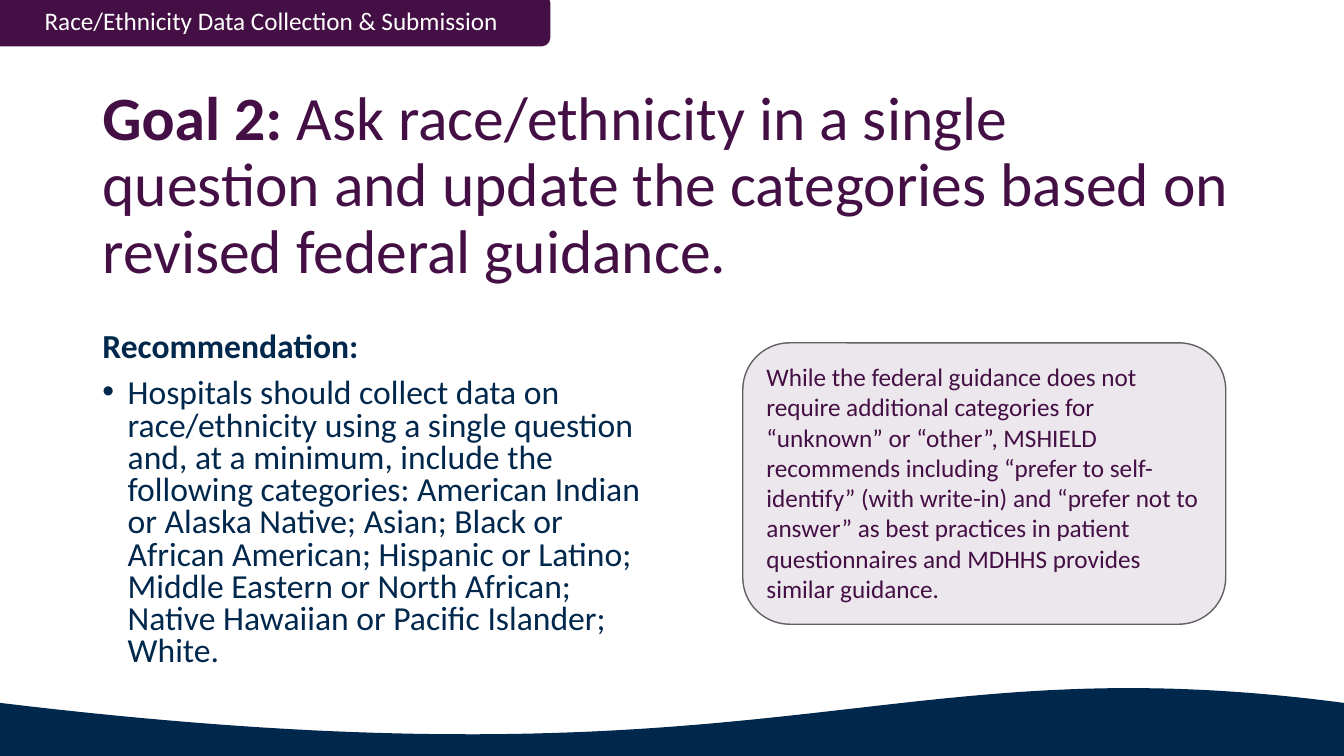
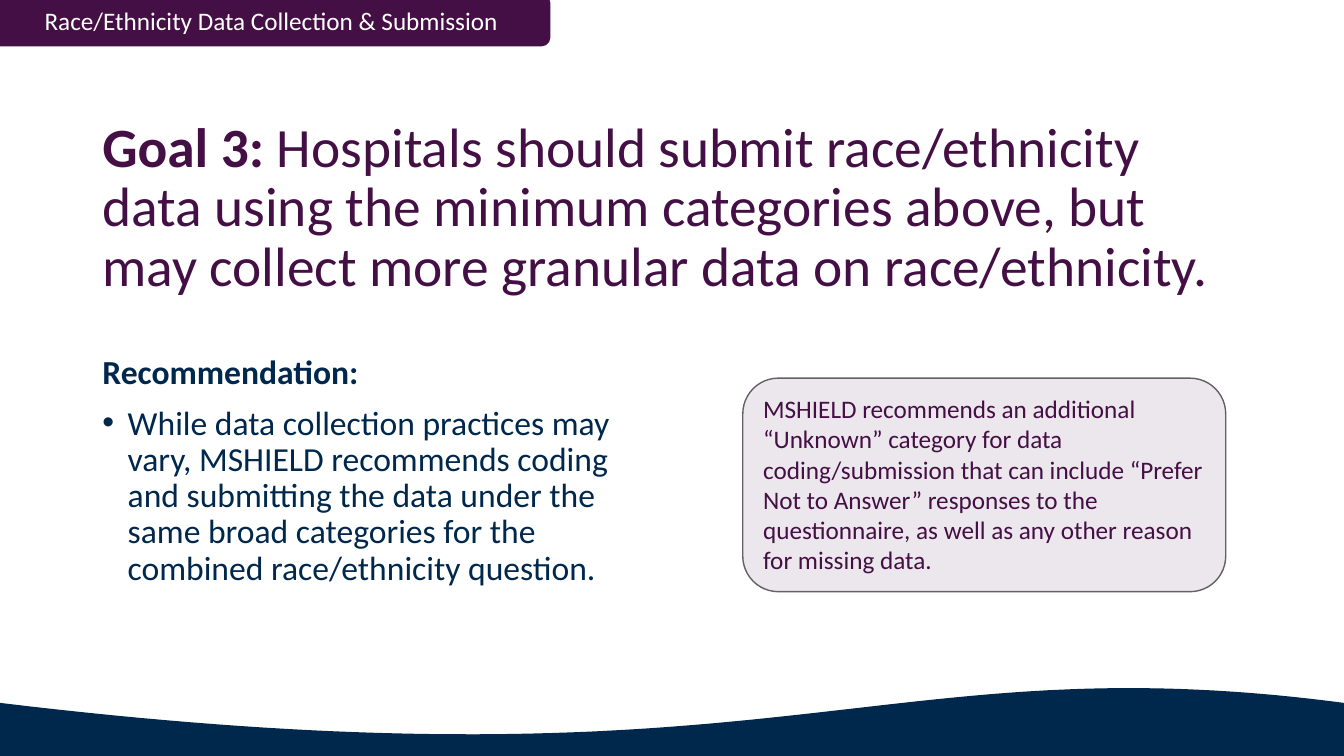
from lxml.etree import SubElement
from pptx import Presentation
from pptx.dml.color import RGBColor
from pptx.enum.shapes import MSO_SHAPE
from pptx.enum.text import MSO_ANCHOR, MSO_AUTO_SIZE, PP_ALIGN
from pptx.oxml.ns import qn
from pptx.util import Cm, Pt

# Shared style
FONT = "Calibri"
PURPLE, NAVY, WHITE = "440F44", "00274C", "FFFFFF"
LILAC, GREY = "ECE7EC", "636163"
SLIDE_W, SLIDE_H = 33.87, 19.05
MARGIN = 2.33
SECTION = "Race/Ethnicity Data Collection & Submission"

# Wave edge: start, two control points, end (cm)
WAVE = [(0, 17.73), (19.84, 20.12), (22.1, 16.18), (SLIDE_W, 17.73)]
WAVE_STEPS = 80

# Content, with vertical places and heights in cm
GOALS = [
    dict(
        label="Goal 2: ",
        goal="Ask race/ethnicity in a single question and update the categories "
             "based on revised federal guidance.",
        goal_size=44, goal_height=5.61,
        advice="Hospitals should collect data on race/ethnicity using a single "
               "question and, at a minimum, include the following categories: "
               "American Indian or Alaska Native; Asian; Black or African American; "
               "Hispanic or Latino; Middle Eastern or North African; Native Hawaiian "
               "or Pacific Islander; White.",
        advice_top=8.26, advice_height=9.53, advice_spacing=0.8,
        note="While the federal guidance does not require additional categories for "
             "“unknown” or “other”, MSHIELD recommends including “prefer to "
             "self-identify” (with write-in) and “prefer not to answer” as best "
             "practices in patient questionnaires and MDHHS provides similar guidance.",
        note_top=8.64, note_height=7.09,
    ),
    dict(
        label="Goal 3: ",
        goal="Hospitals should submit race/ethnicity data using the minimum "
             "categories above, but may collect more granular data on race/ethnicity.",
        goal_size=39.6, goal_height=6.73,
        advice="While data collection practices may vary, MSHIELD recommends coding "
               "and submitting the data under the same broad categories for the "
               "combined race/ethnicity question.",
        advice_top=8.84, advice_height=8.23, advice_spacing=0.9,
        note="MSHIELD recommends an additional “Unknown” category for data "
             "coding/submission that can include “Prefer Not to Answer” responses to "
             "the questionnaire, as well as any other reason for missing data.",
        note_top=9.53, note_height=5.38,
    ),
]


def rgb(code):
    return RGBColor.from_string(code)


def add_text(paragraph, text, size=18, color=NAVY, bold=False):
    run = paragraph.add_run()
    run.text = text
    run.font.name = FONT
    run.font.size = Pt(size)
    run.font.bold = bold
    run.font.color.rgb = rgb(color)


def add_bullet(paragraph, color):
    properties = paragraph._p.get_or_add_pPr()
    properties.set("marL", str(Cm(0.64)))
    properties.set("indent", str(-Cm(0.64)))
    bullet_color = SubElement(properties, qn("a:buClr"))
    SubElement(bullet_color, qn("a:srgbClr"), val=color)
    SubElement(properties, qn("a:buFont"), typeface="Arial")
    SubElement(properties, qn("a:buChar"), char="•")


def paint(shape, fill, line=None):
    shape.shadow.inherit = False
    shape.fill.solid()
    shape.fill.fore_color.rgb = rgb(fill)
    if line:
        shape.line.color.rgb = rgb(line)
        shape.line.width = Pt(1)
    else:
        shape.line.fill.background()


def add_frame(slide, left, top, width, height, anchor=MSO_ANCHOR.TOP):
    box = slide.shapes.add_textbox(Cm(left), Cm(top), Cm(width), Cm(height))
    frame = box.text_frame
    frame.word_wrap = True
    frame.vertical_anchor = anchor
    return frame


def add_panel(slide, left, top, width, height, fill, line=None):
    panel = slide.shapes.add_shape(MSO_SHAPE.ROUNDED_RECTANGLE, Cm(left), Cm(top),
                                   Cm(width), Cm(height))
    paint(panel, fill, line)
    panel.text_frame.word_wrap = True
    return panel.text_frame


def wave_point(t):
    weights = ((1 - t) ** 3, 3 * t * (1 - t) ** 2, 3 * t ** 2 * (1 - t), t ** 3)
    return tuple(Cm(sum(w * point[axis] for w, point in zip(weights, WAVE)))
                 for axis in (0, 1))


def add_wave(slide):
    edge = [wave_point(step / WAVE_STEPS) for step in range(WAVE_STEPS + 1)]
    corners = [(Cm(SLIDE_W), Cm(SLIDE_H)), (0, Cm(SLIDE_H))]
    outline = slide.shapes.build_freeform(*edge[0])
    outline.add_line_segments(edge[1:] + corners, close=True)
    paint(outline.convert_to_shape(), NAVY, NAVY)


def add_banner(slide):
    frame = add_panel(slide, -0.2, -0.15, 14.07, 1.32, PURPLE)
    frame.vertical_anchor = MSO_ANCHOR.MIDDLE
    frame.paragraphs[0].alignment = PP_ALIGN.CENTER
    add_text(frame.paragraphs[0], SECTION, color=WHITE)


def add_title(slide, label, goal, size, height):
    frame = add_frame(slide, MARGIN, 1.9, 29.08, height, MSO_ANCHOR.MIDDLE)
    title = frame.paragraphs[0]
    title.line_spacing = 0.9
    add_text(title, label, size=size, color=PURPLE, bold=True)
    add_text(title, goal, size=size, color=PURPLE)


def add_recommendation(slide, advice, top, height, spacing):
    frame = add_frame(slide, MARGIN, top, 14.6, height)
    heading = frame.paragraphs[0]
    heading.line_spacing = spacing
    add_text(heading, "Recommendation:", size=24, bold=True)
    item = frame.add_paragraph()
    add_bullet(item, NAVY)
    item.line_spacing = spacing
    item.space_before = Pt(10)
    add_text(item, advice, size=24)


def add_note(slide, note, top, height):
    frame = add_panel(slide, 18.72, top, 12.17, height, LILAC, GREY)
    frame.vertical_anchor = MSO_ANCHOR.TOP
    frame.auto_size = MSO_AUTO_SIZE.SHAPE_TO_FIT_TEXT
    frame.paragraphs[0].alignment = PP_ALIGN.LEFT
    add_text(frame.paragraphs[0], note, color=PURPLE)


def main():
    deck = Presentation()
    deck.slide_width, deck.slide_height = Cm(SLIDE_W), Cm(SLIDE_H)
    for goal in GOALS:
        slide = deck.slides.add_slide(deck.slide_layouts[6])
        add_wave(slide)
        add_title(slide, goal["label"], goal["goal"], goal["goal_size"],
                  goal["goal_height"])
        add_recommendation(slide, goal["advice"], goal["advice_top"],
                           goal["advice_height"], goal["advice_spacing"])
        add_banner(slide)
        add_note(slide, goal["note"], goal["note_top"], goal["note_height"])
    deck.save("out.pptx")


if __name__ == "__main__":
    main()
